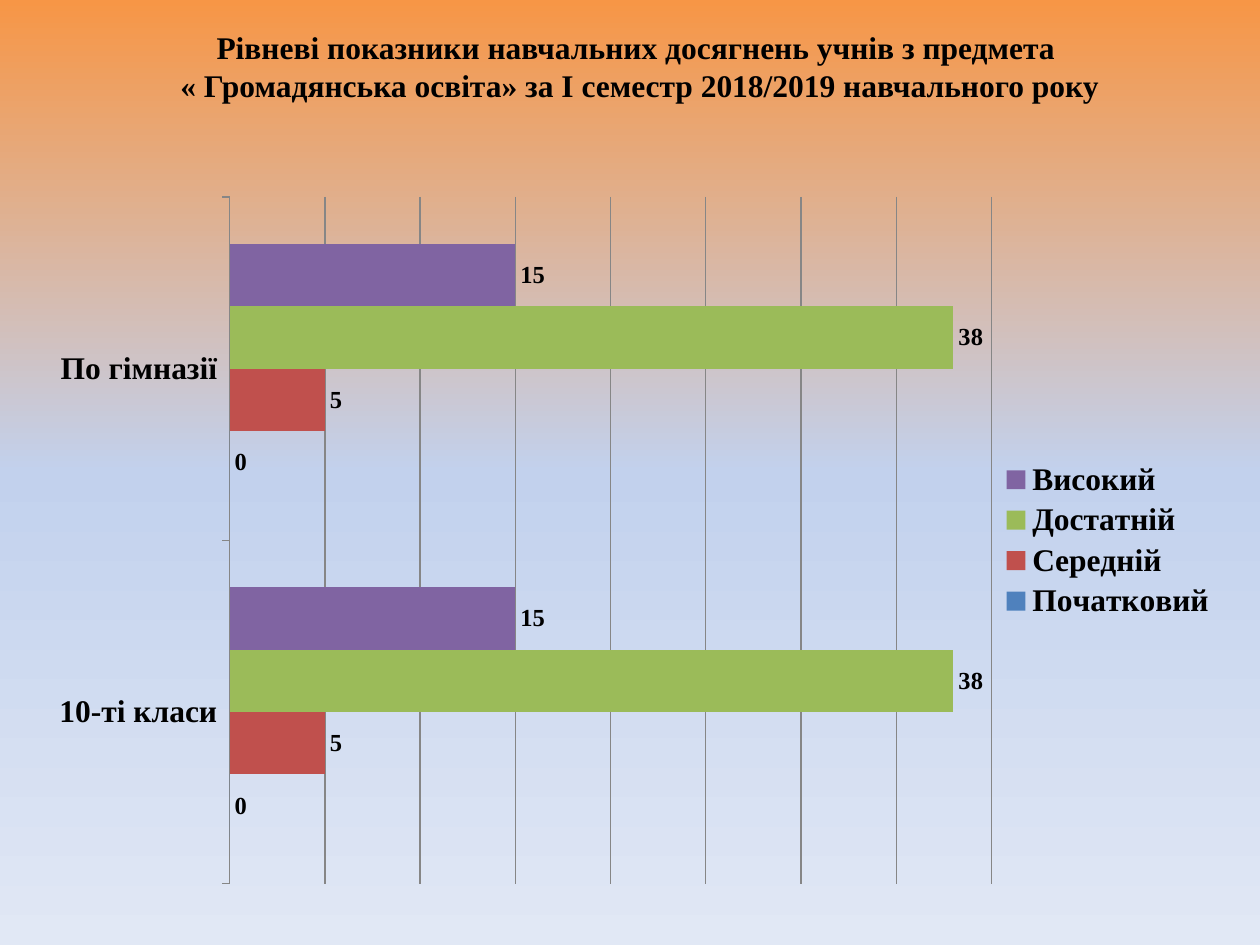
from copy import deepcopy

from lxml import etree
from pptx import Presentation
from pptx.chart.data import CategoryChartData
from pptx.dml.color import RGBColor
from pptx.enum.chart import XL_CHART_TYPE as ChartType
from pptx.enum.chart import XL_LABEL_POSITION as LabelPosition
from pptx.enum.chart import XL_LEGEND_POSITION as LegendPosition
from pptx.enum.chart import XL_TICK_LABEL_POSITION as TickLabels
from pptx.enum.chart import XL_TICK_MARK as TickMark
from pptx.enum.text import MSO_ANCHOR as Anchor
from pptx.enum.text import PP_ALIGN as Align
from pptx.oxml.ns import qn
from pptx.util import Cm, Pt

BLACK = RGBColor(0, 0, 0)
GRAY = RGBColor(0x86, 0x86, 0x86)
ORANGE = RGBColor(0xF7, 0x96, 0x46)
SKY = RGBColor(0xC2, 0xD1, 0xED)
PALE = RGBColor(0xE1, 0xE8, 0xF5)
BLUE = RGBColor(0x4F, 0x81, 0xBD)
RED = RGBColor(0xC0, 0x50, 0x4D)
GREEN = RGBColor(0x9B, 0xBB, 0x59)
PURPLE = RGBColor(0x80, 0x64, 0xA2)

TITLE = ("Рівневі показники навчальних досягнень учнів з предмета \v"
         "« Громадянська освіта» за І семестр 2018/2019 навчального року")
CLASSES = ["10-ті класи", "По гімназії"]
LEVELS = [
    ("Початковий", (0, 0), BLUE),
    ("Середній", (5, 5), RED),
    ("Достатній", (38, 38), GREEN),
    ("Високий", (15, 15), PURPLE),
]


class SlideBuilder:
    font_name = "Times New Roman"

    def __init__(self, page):
        self.page = page

    def style(self, font, size=18):
        font.name = self.font_name
        font.size = Pt(size)
        font.bold = True
        font.color.rgb = BLACK

    def background(self, *colors):
        """Fill the page from top to bottom with evenly spaced colours."""
        fill = self.page.background.fill
        fill.gradient()
        fill.gradient_angle = 270
        stop_list = self.page.element.xpath(".//a:gsLst")[0]
        while len(stop_list) < len(colors):
            stop_list.append(deepcopy(stop_list[0]))
        for index, (stop, color) in enumerate(zip(fill.gradient_stops, colors)):
            stop.color.rgb = color
            stop.position = index / (len(colors) - 1)

    def title(self, text, left, top, width, height):
        box = self.page.shapes.add_textbox(left, top, width, height)
        frame = box.text_frame
        frame.word_wrap = True
        frame.vertical_anchor = Anchor.MIDDLE
        para = frame.paragraphs[0]
        para.text = text
        para.alignment = Align.CENTER
        self.style(para.font)

    def bar_chart(self, categories, series, left, top, width, height):
        data = CategoryChartData()
        data.categories = categories
        for name, values, _ in series:
            data.add_series(name, values)
        chart = self.page.shapes.add_chart(
            ChartType.BAR_CLUSTERED, left, top, width, height, data).chart
        chart.has_title = False
        self.style(chart.font)

        plot = chart.plots[0]
        plot.gap_width = 150
        plot.vary_by_categories = False
        for bars, (_, _, color) in zip(plot.series, series):
            bars.format.fill.solid()
            bars.format.fill.fore_color.rgb = color
        plot.has_data_labels = True
        labels = plot.data_labels
        labels.show_value = True
        labels.position = LabelPosition.OUTSIDE_END
        self.style(labels.font, 14)

        names = chart.category_axis
        names.major_tick_mark = TickMark.OUTSIDE
        names.tick_label_position = TickLabels.NEXT_TO_AXIS
        names.format.line.color.rgb = GRAY
        self.style(names.tick_labels.font)

        scale = chart.value_axis
        scale.minimum_scale, scale.maximum_scale, scale.major_unit = 0, 40, 5
        scale.has_major_gridlines = True
        scale.major_gridlines.format.line.color.rgb = GRAY
        scale.visible = False

        chart.has_legend = True
        chart.legend.position = LegendPosition.RIGHT
        chart.legend.include_in_layout = False
        self.style(chart.legend.font)
        return chart

    def place_plot(self, chart, **fractions):
        """Fix the inner plot area; x, y, w and h are shares of the chart."""
        area = chart.element.xpath(".//c:plotArea")[0]
        for old in area.findall(qn("c:layout")):
            area.remove(old)
        layout = etree.Element(qn("c:layout"))
        area.insert(0, layout)
        manual = etree.SubElement(layout, qn("c:manualLayout"))
        settings = {"layoutTarget": "inner", "xMode": "edge", "yMode": "edge", **fractions}
        for tag, value in settings.items():
            etree.SubElement(manual, qn(f"c:{tag}")).set("val", str(value))


def main():
    deck = Presentation()
    deck.slide_width, deck.slide_height = Cm(25.4), Cm(19.05)
    builder = SlideBuilder(deck.slides.add_slide(deck.slide_layouts[6]))
    builder.background(ORANGE, SKY, PALE)
    builder.title(TITLE, Cm(1.19), Cm(0.33), Cm(23.42), Cm(2))
    chart = builder.bar_chart(CLASSES, LEVELS, Cm(0.79), Cm(3.53), Cm(24), Cm(14.73))
    builder.place_plot(chart, x=0.16, y=0.03, w=0.64, h=0.94)
    deck.save("out.pptx")


if __name__ == "__main__":
    main()
